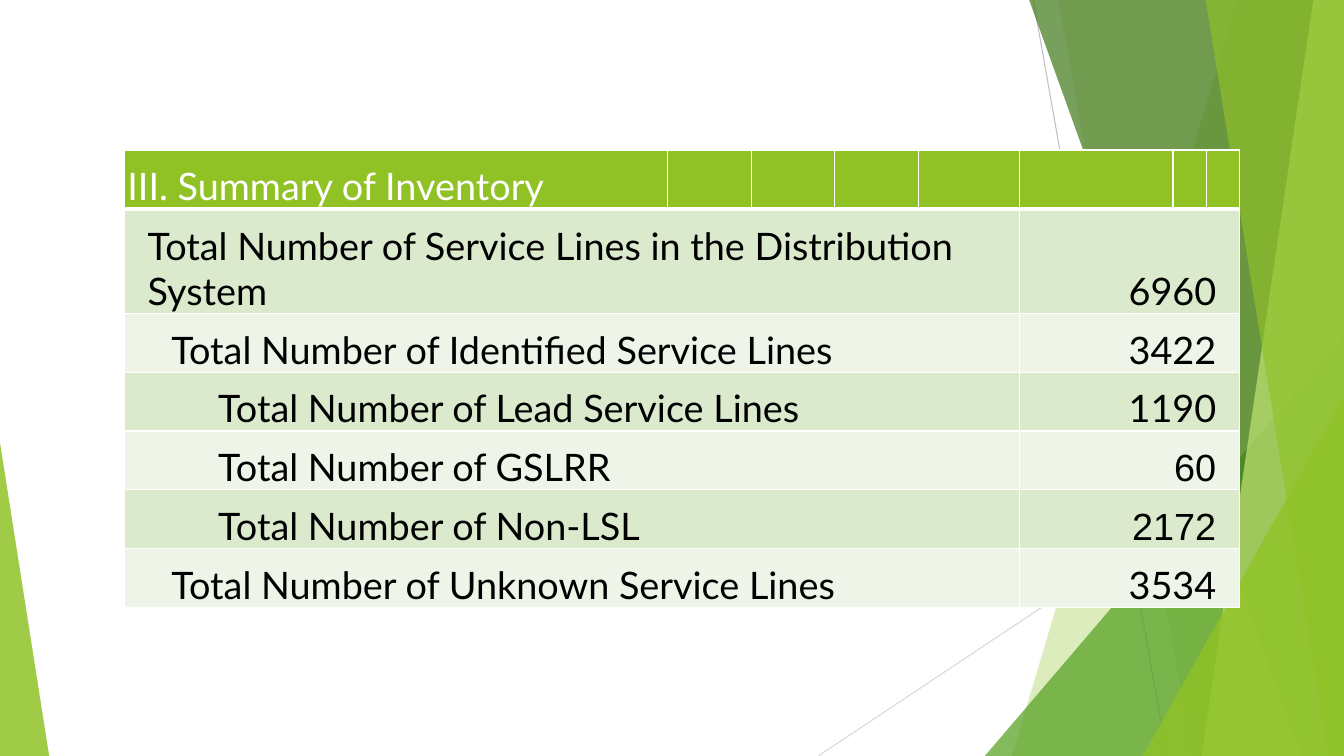
import pptx
import pptx.util
import pptx.dml.color
import pptx.enum.shapes
import pptx.enum.text
import pptx.oxml
import pptx.oxml.ns
from pptx.util import Cm, Pt

# Content: label, its indent in cm, count, font of the count
TITLE = "III. Summary of Inventory"
ROWS = [
    ("Total Number of Service Lines in the Distribution System", 0.59, "6960", "Lato"),
    ("Total Number of Identified Service Lines", 1.19, "3422", "Lato"),
    ("Total Number of Lead Service Lines", 2.37, "1190", "Lato"),
    ("Total Number of GSLRR", 2.37, "60", "Arial"),
    ("Total Number of Non-LSL", 2.37, "2172", "Arial"),
    ("Total Number of Unknown Service Lines", 1.19, "3534", "Lato"),
]
COLS = [13.69] + [2.11] * 4 + [3.86, 0.84, 0.84]
LOW, TALL = 1.48, 2.64
SPLIT = 5  # first column of the counts
PAD = 0.08

HUES = {
    "lime": "90C226", "leaf": "54A021", "pine": "3F7819", "pale": "C0E474",
    "odd": "DBE9CD", "even": "EEF4E8", "white": "FFFFFF", "black": "000000",
    "grey": "BFBFBF", "mist": "D9D9D9",
}
WIDE, HIGH = 33.87, 19.05

# Backdrop, from back to front
LINES = [(26.04, 0, 29.41, HIGH, "grey"), (WIDE, 10.24, 20.62, HIGH, "mist")]
# band: top left x, bottom left x; wedge: left, top, width, apex
SHAPES = [
    ("band", (31.19, 25.5), "lime", 30),
    ("band", (26.67, 30.05), "lime", 20),
    ("wedge", (24.82, 8.46, WIDE - 24.82, 1), "leaf", 72),
    ("band", (25.93, 32.79), "pine", 70),
    ("band", (33.1, 30.28), "pale", 70),
    ("band", (30.38, 33.48), "lime", 65),
    ("wedge", (28.8, 9.98, WIDE - 28.8, 1), "lime", 80),
    ("wedge", (0, 11.15, 1.24, 0), "lime", 85),
]


def hue(name):
    return pptx.dml.color.RGBColor.from_string(HUES[name])


def paint(shape, name, alpha):
    shape.shadow.inherit = False
    shape.line.fill.background()
    shape.fill.solid()
    shape.fill.fore_color.rgb = hue(name)
    tone = shape.fill._xPr.find(".//" + pptx.oxml.ns.qn("a:srgbClr"))
    tone.append(pptx.oxml.parse_xml(
        f'<a:alpha {pptx.oxml.ns.nsdecls("a")} val="{alpha * 1000}"/>'))


def dress(cell, name, base=1):
    """Draw white borders, then fill the cell."""
    props = cell._tc.get_or_add_tcPr()
    for side, width in zip("LRTB", (1, 1, 1, base)):
        props.append(pptx.oxml.parse_xml(
            f'<a:ln{side} {pptx.oxml.ns.nsdecls("a")} w="{Pt(width)}"><a:solidFill>'
            f'<a:srgbClr val="{HUES["white"]}"/></a:solidFill></a:ln{side}>'))
    cell.fill.solid()
    cell.fill.fore_color.rgb = hue(name)


def write(cell, text, tint, left=PAD, right=PAD, face="Lato", align=None):
    cell.text = text
    cell.vertical_anchor = pptx.enum.text.MSO_ANCHOR.BOTTOM
    cell.margin_left, cell.margin_right = Cm(left), Cm(right)
    cell.margin_top, cell.margin_bottom = Cm(PAD), 0
    para = cell.text_frame.paragraphs[0]
    para.alignment = align
    font = para.font
    font.name, font.size, font.bold = face, Pt(27), False
    font.color.rgb = hue(tint)


def backdrop(slide):
    for x1, y1, x2, y2, name in LINES:
        line = slide.shapes.add_connector(
            pptx.enum.shapes.MSO_CONNECTOR.STRAIGHT, Cm(x1), Cm(y1), Cm(x2), Cm(y2))
        line.line.color.rgb = hue(name)
        line.line.width = Pt(0.75)
        line._element.spPr.append(pptx.oxml.parse_xml(
            f'<a:effectLst {pptx.oxml.ns.nsdecls("a")}/>'))
    for kind, spot, name, alpha in SHAPES:
        if kind == "band":
            top, base = spot
            pen = slide.shapes.build_freeform(Cm(top), Cm(-0.02))
            pen.add_line_segments([(Cm(x), Cm(y)) for x, y in (
                (WIDE, -0.02), (WIDE, HIGH), (base, HIGH))], close=True)
            shape = pen.convert_to_shape()
        else:
            x, y, width, apex = spot
            shape = slide.shapes.add_shape(
                pptx.enum.shapes.MSO_SHAPE.ISOSCELES_TRIANGLE,
                Cm(x), Cm(y), Cm(width), Cm(HIGH - y))
            shape.adjustments[0] = apex
        paint(shape, name, alpha)


def summary(slide):
    highs = [LOW, TALL] + [LOW] * (len(ROWS) - 1)
    table = slide.shapes.add_table(
        len(highs), len(COLS), Cm(3.13), Cm(3.78), Cm(sum(COLS)), Cm(sum(highs))).table
    for col, width in zip(table.columns, COLS):
        col.width = Cm(width)
    for row, high in zip(table.rows, highs):
        row.height = Cm(high)

    # Header
    for cell in table.rows[0].cells:
        dress(cell, "lime", 3)
    write(table.cell(0, 0), TITLE, "white")

    # Labels and counts
    last = len(COLS) - 1
    for i, (label, dent, count, face) in enumerate(ROWS, 1):
        for cell in table.rows[i].cells:
            dress(cell, "odd" if i % 2 else "even")
        name, total = table.cell(i, 0), table.cell(i, SPLIT)
        name.merge(table.cell(i, SPLIT - 1))
        total.merge(table.cell(i, last))
        write(name, label, "black", left=dent)
        write(total, count, "black", right=0.59, face=face,
              align=pptx.enum.text.PP_ALIGN.RIGHT)


def main():
    deck = pptx.Presentation()
    deck.slide_width, deck.slide_height = Cm(WIDE), Cm(HIGH)
    slide = deck.slides.add_slide(deck.slide_layouts[6])
    backdrop(slide)
    summary(slide)
    deck.save("out.pptx")


if __name__ == "__main__":
    main()
